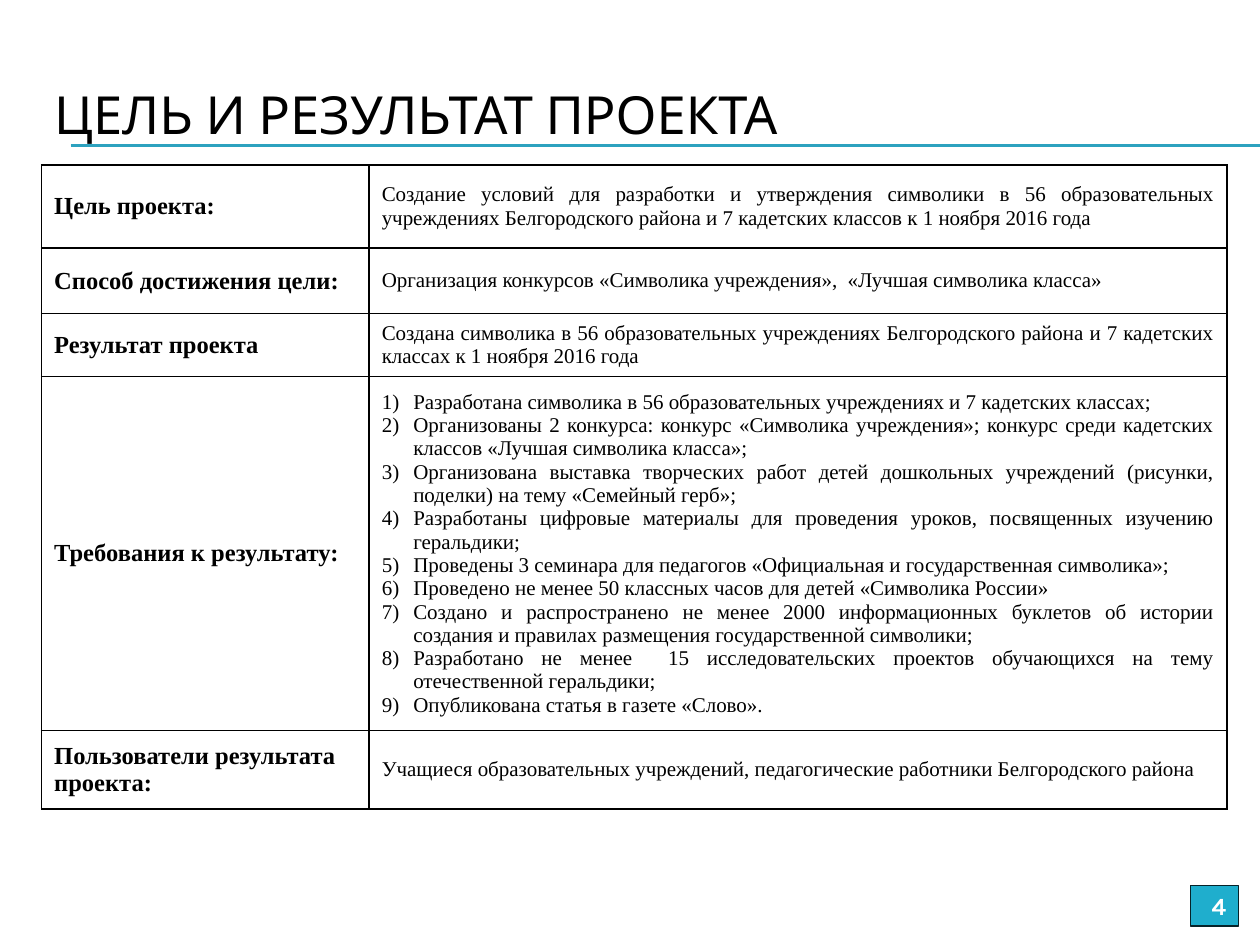
from dataclasses import dataclass
from lxml import etree
from pptx import Presentation
from pptx import util as u
from pptx.dml.color import RGBColor
from pptx.enum import shapes, text
from pptx.oxml import ns

WIDE, HIGH = 10, 7.5
EDGE = 0.33
TOP = 1.31
COLS = (2.6, 6.81)
SERIF, SANS = "Times New Roman", "Karla"
BLACK, WHITE, TEAL = "000000", "FFFFFF", "2DA2BF"
LEFT, RIGHT, JUST = text.PP_ALIGN.LEFT, text.PP_ALIGN.RIGHT, text.PP_ALIGN.JUSTIFY


@dataclass
class Row:
    head: str
    body: list[str]
    high: float
    align: int = JUST


ROWS = [
    Row("Цель проекта:",
        ["Создание условий для разработки и утверждения символики в 56 образовательных "
         "учреждениях Белгородского района и 7 кадетских классов к 1 ноября 2016 года"], 0.66),
    Row("Способ достижения цели:",
        ["Организация конкурсов «Символика учреждения»,  «Лучшая символика класса»"], 0.52, LEFT),
    Row("Результат проекта",
        ["Создана символика в 56 образовательных учреждениях Белгородского района "
         "и 7 кадетских классах к 1 ноября 2016 года"], 0.5),
    Row("Требования к результату:",
        ["Разработана символика в 56 образовательных учреждениях и 7 кадетских классах;",
         "Организованы 2 конкурса: конкурс «Символика учреждения»; конкурс среди "
         "кадетских классов «Лучшая символика класса»;",
         "Организована выставка творческих работ детей дошкольных учреждений "
         "(рисунки, поделки) на тему «Семейный герб»;",
         "Разработаны цифровые материалы для проведения уроков, посвященных "
         "изучению геральдики;",
         "Проведены 3 семинара для педагогов «Официальная и государственная символика»;",
         "Проведено не менее 50 классных часов для детей «Символика России»",
         "Создано и распространено не менее 2000 информационных буклетов об истории "
         "создания и правилах размещения государственной символики;",
         "Разработано не менее  15 исследовательских проектов обучающихся на тему "
         "отечественной геральдики;",
         "Опубликована статья в газете «Слово»."], 2.81),
    Row("Пользователи результата проекта:",
        ["Учащиеся образовательных учреждений, педагогические работники "
         "Белгородского района"], 0.62),
]


def color(code: str) -> RGBColor:
    return RGBColor.from_string(code)


def box(*sides: float) -> list[int]:
    return [u.Inches(side) for side in sides]


def style(par, face: str, size: float, tint: str = BLACK, bold: bool = False, align=LEFT) -> None:
    par.alignment = align
    font = par.font
    font.name, font.size, font.bold = face, u.Pt(size), bold
    font.color.rgb = color(tint)


def number(par) -> None:
    """Number a paragraph 1), 2), ... with a hanging indent."""
    props = par._p.get_or_add_pPr()
    props.set("marL", str(u.Inches(0.25)))
    props.set("indent", str(-u.Inches(0.25)))
    mark = etree.Element(ns.qn("a:buAutoNum"), type="arabicParenR")
    props.insert_element_before(mark, "a:tabLst", "a:defRPr", "a:extLst")


def border(cell) -> None:
    props = cell._tc.get_or_add_tcPr()
    for spot, side in enumerate(("lnL", "lnR", "lnT", "lnB")):
        line = etree.Element(ns.qn(f"a:{side}"), w=str(u.Pt(1)))
        fill = etree.SubElement(line, ns.qn("a:solidFill"))
        etree.SubElement(fill, ns.qn("a:srgbClr"), val=BLACK)
        props.insert(spot, line)


def fill_cell(cell, lines: list[str], size: float, bold: bool, align) -> None:
    cell.fill.solid()
    cell.fill.fore_color.rgb = color(WHITE)
    border(cell)
    cell.vertical_anchor = text.MSO_ANCHOR.MIDDLE
    cell.text = "\n".join(lines)
    for par in cell.text_frame.paragraphs:
        style(par, SERIF, size, bold=bold, align=align)
        if len(lines) > 1:
            number(par)


def rule(slide, y: float) -> None:
    line = slide.shapes.add_connector(
        shapes.MSO_CONNECTOR.STRAIGHT, *box(0.56, y, WIDE, y))
    line.line.color.rgb = color(TEAL)
    line.line.width = u.Pt(0.75)
    etree.SubElement(line._element.spPr, ns.qn("a:effectLst"))


def head(slide, words: str) -> None:
    title = slide.shapes.title
    title.left, title.top, title.width, title.height = box(EDGE, 0.44, 0.95 * WIDE, 0.92)
    frame = title.text_frame
    frame.text = words
    frame.vertical_anchor = text.MSO_ANCHOR.MIDDLE
    style(frame.paragraphs[0], SANS, 30)


def grid(slide, rows: list[Row]) -> None:
    high = sum(row.high for row in rows)
    table = slide.shapes.add_table(
        len(rows), len(COLS), *box(EDGE, TOP, sum(COLS), high)).table
    for col, wide in zip(table.columns, COLS):
        col.width = u.Inches(wide)
    for num, row in enumerate(rows):
        table.rows[num].height = u.Inches(row.high)
        fill_cell(table.cell(num, 0), [row.head], 14, True, LEFT)
        fill_cell(table.cell(num, 1), row.body, 12, False, row.align)


def badge(slide, page: str) -> None:
    tile = slide.shapes.add_shape(
        shapes.MSO_SHAPE.RECTANGLE, *box(9.45, 7.03, 0.38, 0.32))
    tile.shadow.inherit = False
    tile.fill.solid()
    tile.fill.fore_color.rgb = color("1FAECD")
    tile.line.color.rgb = color("062329")
    tile.line.width = u.Pt(0.75)
    tile.text_frame.text = page
    style(tile.text_frame.paragraphs[0], SANS, 14, WHITE, True, RIGHT)


def main() -> None:
    deck = Presentation()
    deck.slide_width, deck.slide_height = box(WIDE, HIGH)
    slide = deck.slides.add_slide(deck.slide_layouts[5])
    # Double rule under the title
    for y in (1.15, 1.16):
        rule(slide, y)
    # Title, page number and table
    head(slide, "ЦЕЛЬ И РЕЗУЛЬТАТ ПРОЕКТА")
    badge(slide, "4")
    grid(slide, ROWS)
    deck.save("out.pptx")


if __name__ == "__main__":
    main()
